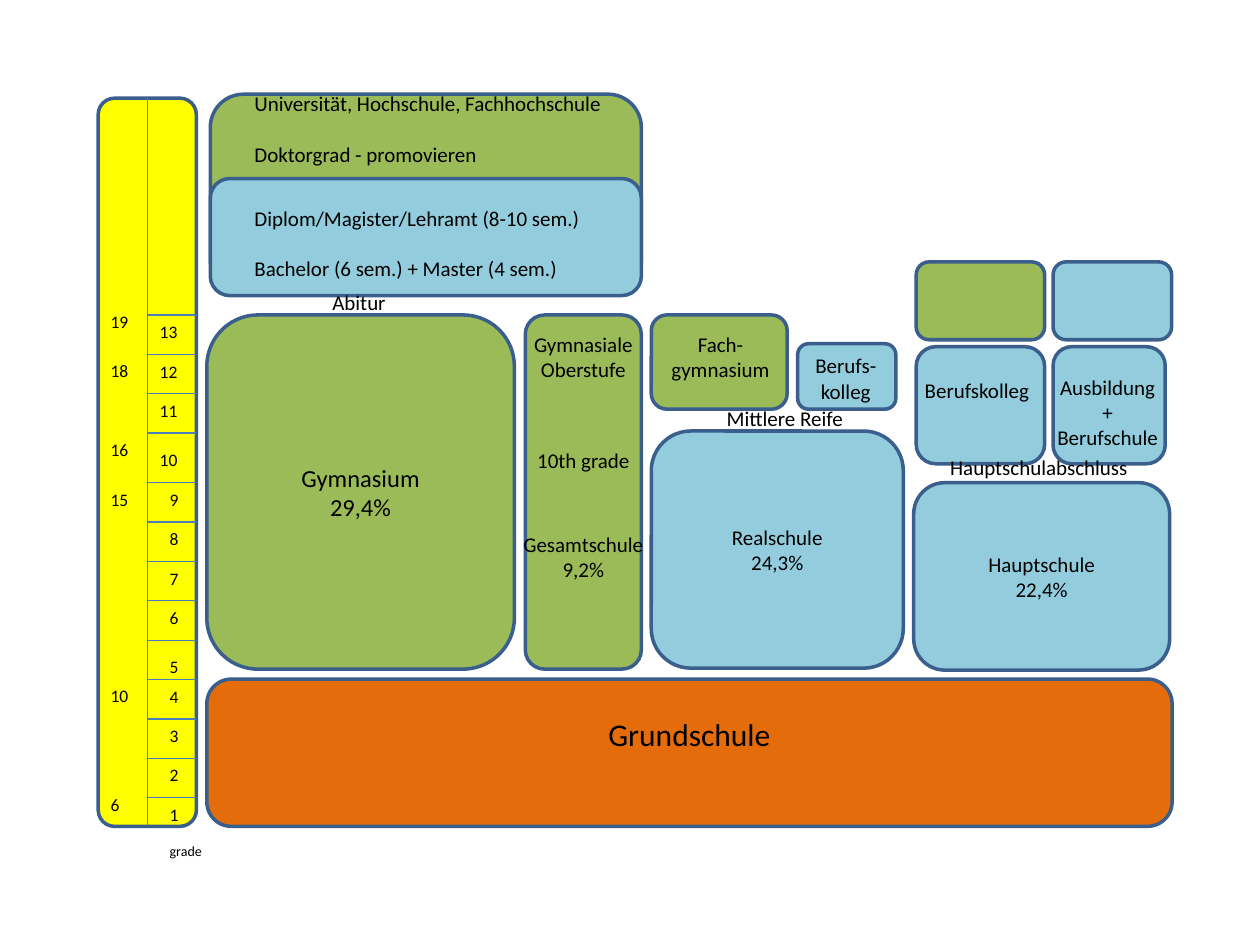
from pptx import Presentation
from pptx.dml.color import RGBColor
from pptx.enum.shapes import MSO_CONNECTOR, MSO_SHAPE
from pptx.enum.text import MSO_ANCHOR, MSO_AUTO_SIZE, PP_ALIGN
from pptx.oxml.ns import qn
from pptx.util import Cm, Pt

ROUND = MSO_SHAPE.ROUNDED_RECTANGLE
STRAIGHT = MSO_CONNECTOR.STRAIGHT
MIDDLE = MSO_ANCHOR.MIDDLE
GROW = MSO_AUTO_SIZE.SHAPE_TO_FIT_TEXT
LEFT, CENTER = PP_ALIGN.LEFT, PP_ALIGN.CENTER
FONT = "Calibri"
COLORS = {
    "yellow": "FFFF00", "orange": "E46C0A", "green": "9BBB59",
    "blue": "93CDDD", "edge": "3A5F8C", "rule": "4B7EBC", "text": "000000",
}
ROW = 6.35 / 8  # height of one school year in cm


def color(name):
    return RGBColor.from_string(COLORS[name])


def write(frame, text, size, align, gap=0):
    frame.text = text
    for para in frame.paragraphs:
        para.alignment = align
        for run in para.runs:
            run.font.name = FONT
            run.font.size = Pt(size)
            run.font.color.rgb = color("text")
    frame.paragraphs[0].space_after = Pt(gap)


def block(slide, x, y, w, h, fill, text="", size=12):
    shape = slide.shapes.add_shape(ROUND, Cm(x), Cm(y), Cm(w), Cm(h))
    shape.shadow.inherit = False
    shape.fill.solid()
    shape.fill.fore_color.rgb = color(fill)
    shape.line.color.rgb = color("edge")
    shape.line.width = Pt(2)
    if text:
        shape.text_frame.vertical_anchor = MIDDLE
        write(shape.text_frame, text, size, CENTER)
    return shape


def note(slide, x, y, w, h, text, size=12, align=CENTER, gap=0):
    box = slide.shapes.add_textbox(Cm(x), Cm(y), Cm(w), Cm(h))
    frame = box.text_frame
    frame.word_wrap = True
    frame.auto_size = GROW
    write(frame, text, size, align, gap)
    return frame


def rule(slide, x1, y1, x2, y2):
    line = slide.shapes.add_connector(STRAIGHT, Cm(x1), Cm(y1), Cm(x2), Cm(y2))
    line.line.color.rgb = color("rule")
    line.line.width = Pt(0.75)
    props = line._element.spPr
    props.append(props.makeelement(qn("a:effectLst"), {}))


def scale(slide, x, y, w, h):
    """Ages on the left, grades on the right."""
    block(slide, x, y, w, h, "yellow")
    mid = x + w / 2
    rule(slide, mid, y, mid, y + h)

    # Grade 10 is a taller row, so the upper rows start anew
    tops = [14.1 - ROW * k for k in range(9)] + [6.75 - ROW * k for k in range(4)]
    for grade, top in enumerate(tops, 1):
        rule(slide, mid, y + top, x + w, y + top)
        drop = 0.2 if grade in (5, 10) else 0
        left, wide = (mid + 0.2, 0.58) if grade < 10 else (mid, w / 2)
        note(slide, left, y + top + drop, wide, 0.68, str(grade), 10, LEFT)
    note(slide, mid + 0.2, y + h + 0.2, 1.19, 0.6, "grade", 8, LEFT)

    ages = {6: 13.9, 10: 11.71, 15: 7.75, 16: 6.75, 18: 5.16, 19: 4.17}
    for age, top in ages.items():
        note(slide, x, y + top, w / 2, 0.68, str(age), 10, LEFT)


def primary(slide, x, y, w, h):
    shape = block(slide, x, y, w, h, "orange", "Grundschule", 18)
    shape.text_frame.margin_bottom = Cm(0.9)


def higher(slide, x, y, w, h):
    """Universities, with the school leaving exam below."""
    block(slide, x, y, w, h - 0.05, "green")
    block(slide, x, y + 1.7, w, h - 1.7, "blue")
    degrees = (
        (-0.2, "Universität, Hochschule, Fachhochschule\nDoktorgrad - promovieren"),
        (2.11, "Diplom/Magister/Lehramt (8-10 sem.)\nBachelor (6 sem.) + Master (4 sem.)"),
    )
    for top, text in degrees:
        note(slide, x + 0.64, y + top, 7.75, 1.8, text, align=LEFT, gap=14.6)
    note(slide, x + 2.21, y + 3.82, 1.6, 0.77, "Abitur", align=LEFT)


def general(slide, x, y, w, h):
    """Gymnasium and the comprehensive school."""
    block(slide, x, y, 6.2, h, "green", "Gymnasium\n29,4%", 14)
    wide = 2.34
    left = x + w - wide
    block(slide, left, y, wide, h, "green")
    parts = (
        (0.2, 1.3, "Gymnasiale\nOberstufe"),
        (2.54, 0.77, "10th grade"),
        (4.24, 1.3, "Gesamtschule\n9,2%"),
    )
    for top, tall, text in parts:
        note(slide, left - 0.42, y + top, wide + 0.84, tall, text)


def middle(slide, x, y, w, h):
    """Realschule and the schools that follow it."""
    block(slide, x, y + 2.34, w, h - 2.34, "blue", "Realschule\n24,3%")
    block(slide, x, y, 2.74, 1.9, "green")
    block(slide, x + 2.95, y + 0.58, 1.98, 1.32, "blue")
    note(slide, x - 0.22, y + 0.2, 3.23, 1.3, "Fach-gymnasium")
    note(slide, x + 2.75, y + 0.64, 2.34, 1.3, "Berufs-kolleg")
    note(slide, x + 1.27, y + 1.7, 3.18, 0.77, "Mittlere Reife", align=LEFT)


def lower(slide, x, y, w, h):
    """Hauptschule and the training that follows it."""
    block(slide, x, y + 4.45, w, h - 4.45, "blue", "Hauptschule\n22,4%")
    left, right = x + 0.05, x + 2.81
    block(slide, left, y, 2.59, 1.57, "green")
    block(slide, right, y, 2.39, 1.57, "blue")
    block(slide, left, y + 1.71, 2.59, 2.36, "blue")
    block(slide, right, y + 1.71, 2.26, 2.36, "blue")
    note(slide, x - 0.21, y + 2.21, 2.97, 0.77, "Berufskolleg")
    note(slide, x + 2.54, y + 2.14, 2.74, 1.8, "Ausbildung\n+\nBerufschule")
    exam = note(slide, x + 0.2, y + 3.89, 4.65, 0.64, "Hauptschulabschluss")
    exam.margin_top = 0


def main():
    deck = Presentation()
    deck.slide_width, deck.slide_height = Cm(25.4), Cm(19.05)
    slide = deck.slides.add_slide(deck.slide_layouts[6])
    scale(slide, 1.98, 1.98, 1.98, 14.68)
    primary(slide, 4.17, 13.69, 19.46, 2.97)
    higher(slide, 4.24, 1.9, 8.69, 4.06)
    general(slide, 4.17, 6.35, 8.76, 7.14)
    middle(slide, 13.13, 6.35, 5.08, 7.12)
    lower(slide, 18.42, 5.28, 5.16, 8.23)
    deck.save("out.pptx")


if __name__ == "__main__":
    main()
